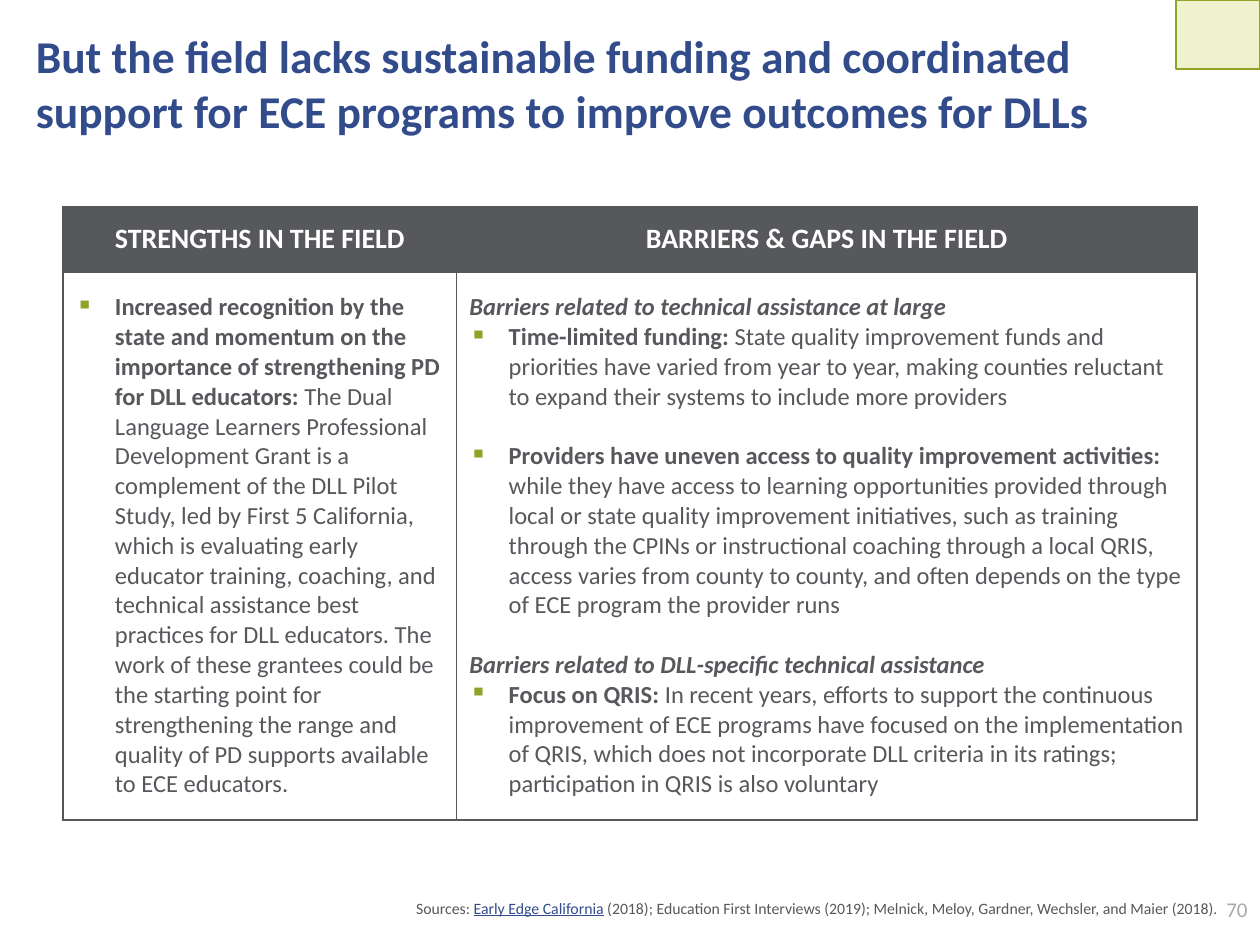
from lxml import etree
from pptx import Presentation
from pptx.dml.color import RGBColor
from pptx.enum import shapes, text
from pptx.oxml.ns import qn
from pptx.util import Pt

BLUE = RGBColor(0x32, 0x4B, 0x8B)
GRAY = RGBColor(0x56, 0x58, 0x5C)
PALE = RGBColor(0xA9, 0xA9, 0xA9)
GREEN = RGBColor(0x91, 0xA2, 0x26)
LIME = RGBColor(0xEE, 0xF3, 0xCD)
WHITE = RGBColor(0xFF, 0xFF, 0xFF)
LEFT, MID, RIGHT = text.PP_ALIGN.LEFT, text.PP_ALIGN.CENTER, text.PP_ALIGN.RIGHT

TITLE = ("But the field lacks sustainable funding and coordinated support "
         "for ECE programs to improve outcomes for DLLs")
HEADS = ["STRENGTHS IN THE FIELD", "BARRIERS & GAPS IN THE FIELD"]
PLUS = [
    ("Increased recognition by the state and momentum on the importance of "
     "strengthening PD for DLL educators:",
     " The Dual Language Learners Professional Development Grant is a complement "
     "of the DLL Pilot Study, led by First 5 California, which is evaluating early "
     "educator training, coaching, and technical assistance best practices for DLL "
     "educators. The work of these grantees could be the starting point for "
     "strengthening the range and quality of PD supports available to ECE educators.", 6),
]
GAPS = [
    ("Barriers related to technical assistance at large", "", 0),
    ("Time-limited funding: ",
     "State quality improvement funds and priorities have varied from year to year, "
     "making counties reluctant to expand their systems to include more providers", 17),
    ("Providers have uneven access to quality improvement activities: ",
     "while they have access to learning opportunities provided through local or state "
     "quality improvement initiatives, such as training through the CPINs or "
     "instructional coaching through a local QRIS, access varies from county to county, "
     "and often depends on the type of ECE program the provider runs", 17),
    ("Barriers related to DLL-specific technical assistance", "", 0),
    ("Focus on QRIS: ",
     "In recent years, efforts to support the continuous improvement of ECE programs "
     "have focused on the implementation of QRIS, which does not incorporate DLL "
     "criteria in its ratings; participation in QRIS is also voluntary", 0),
]
SOURCE = [("Sources: ", GRAY), ("Early Edge California", BLUE),
          (" (2018); Education First Interviews (2019); Melnick, Meloy, Gardner, "
           "Wechsler, and Maier (2018).", GRAY)]


def add_run(para, words, size, color, bold=False):
    """Append a styled run to a paragraph."""
    run = para.add_run()
    run.text = words
    font = run.font
    font.name, font.size, font.bold = "Calibri", Pt(size), bold
    font.color.rgb = color
    return run


def add_text(slide, box, parts, size, align=LEFT, bold=False, mid=True, pad=0):
    """Place one paragraph of coloured runs in a box and return it."""
    frame = slide.shapes.add_textbox(*map(Pt, box)).text_frame
    frame.word_wrap = True
    frame.margin_left = frame.margin_right = Pt(pad)
    frame.margin_top = frame.margin_bottom = Pt(pad / 2)
    frame.vertical_anchor = text.MSO_ANCHOR.MIDDLE if mid else text.MSO_ANCHOR.TOP
    para = frame.paragraphs[0]
    para.alignment = align
    for words, color in parts:
        add_run(para, words, size, color, bold)
    return para


def add_bullet(para):
    """Give a paragraph a hanging green square bullet."""
    props = para._p.get_or_add_pPr()
    props.set("marL", str(Pt(22.5)))
    props.set("indent", str(-Pt(22.5)))
    color = etree.SubElement(props, qn("a:buClr"))
    etree.SubElement(color, qn("a:srgbClr"), val=str(GREEN))
    etree.SubElement(props, qn("a:buChar"), char="▪")


def set_cell(cell, fill):
    """Outline, fill and centre a cell vertically."""
    props = cell._tc.get_or_add_tcPr()
    for side in ("lnL", "lnR", "lnT", "lnB"):
        line = etree.SubElement(props, qn(f"a:{side}"), w=str(Pt(1)))
        solid = etree.SubElement(line, qn("a:solidFill"))
        etree.SubElement(solid, qn("a:srgbClr"), val=str(GRAY))
    cell.fill.solid()
    cell.fill.fore_color.rgb = fill
    cell.vertical_anchor = text.MSO_ANCHOR.MIDDLE


def fill_list(cell, items):
    """Write subheads and bulleted points in a cell."""
    frame = cell.text_frame
    for i, (lead, rest, gap) in enumerate(items):
        para = frame.add_paragraph() if i else frame.paragraphs[0]
        para.space_after = Pt(gap)
        if rest:
            add_bullet(para)
        head = add_run(para, lead, 14, GRAY, True)
        head.font.italic = not rest
        if rest:
            add_run(para, rest, 14, GRAY)


def add_grid(slide, box):
    """Build the table of strengths and barriers."""
    x, y, w, h = box
    table = slide.shapes.add_table(2, 2, *map(Pt, box)).table
    for col, wide in zip(table.columns, (225, w - 225)):
        col.width = Pt(wide)
    for row, high in zip(table.rows, (37.5, h - 37.5)):
        row.height = Pt(high)
    for i, (head, items) in enumerate(zip(HEADS, (PLUS, GAPS))):
        top, body = table.cell(0, i), table.cell(1, i)
        set_cell(top, GRAY)
        para = top.text_frame.paragraphs[0]
        para.alignment = MID
        add_run(para, head, 16, WHITE, True)
        set_cell(body, WHITE)
        fill_list(body, items)


def add_mark(slide, box):
    """Draw the pale corner block."""
    mark = slide.shapes.add_shape(shapes.MSO_SHAPE.RECTANGLE, *map(Pt, box))
    mark.shadow.inherit = False
    mark.fill.solid()
    mark.fill.fore_color.rgb = LIME
    mark.line.color.rgb = GREEN
    mark.line.width = Pt(0.75)


def add_foot(slide, box):
    """Place the source line and the page number."""
    x, y, w, h = box
    para = add_text(slide, (x, y + 2, 659.5, 16.5), SOURCE, 9, RIGHT)
    para.runs[1].font.underline = True
    add_text(slide, (x + w - 48, y, 48, h), [("70", PALE)], 12, RIGHT, pad=7.2)


def main():
    """Build and save the slide."""
    deck = Presentation()
    deck.slide_width, deck.slide_height = Pt(720), Pt(540)
    slide = deck.slides.add_slide(deck.slide_layouts[6])
    add_text(slide, (20.5, 16, 679, 62), [(TITLE, BLUE)], 26, bold=True, mid=False)
    add_mark(slide, (672, 0, 48, 39.5))
    add_grid(slide, (36, 118, 648, 350.5))
    add_foot(slide, (36, 508.5, 684, 21.5))
    deck.save("out.pptx")


if __name__ == "__main__":
    main()
